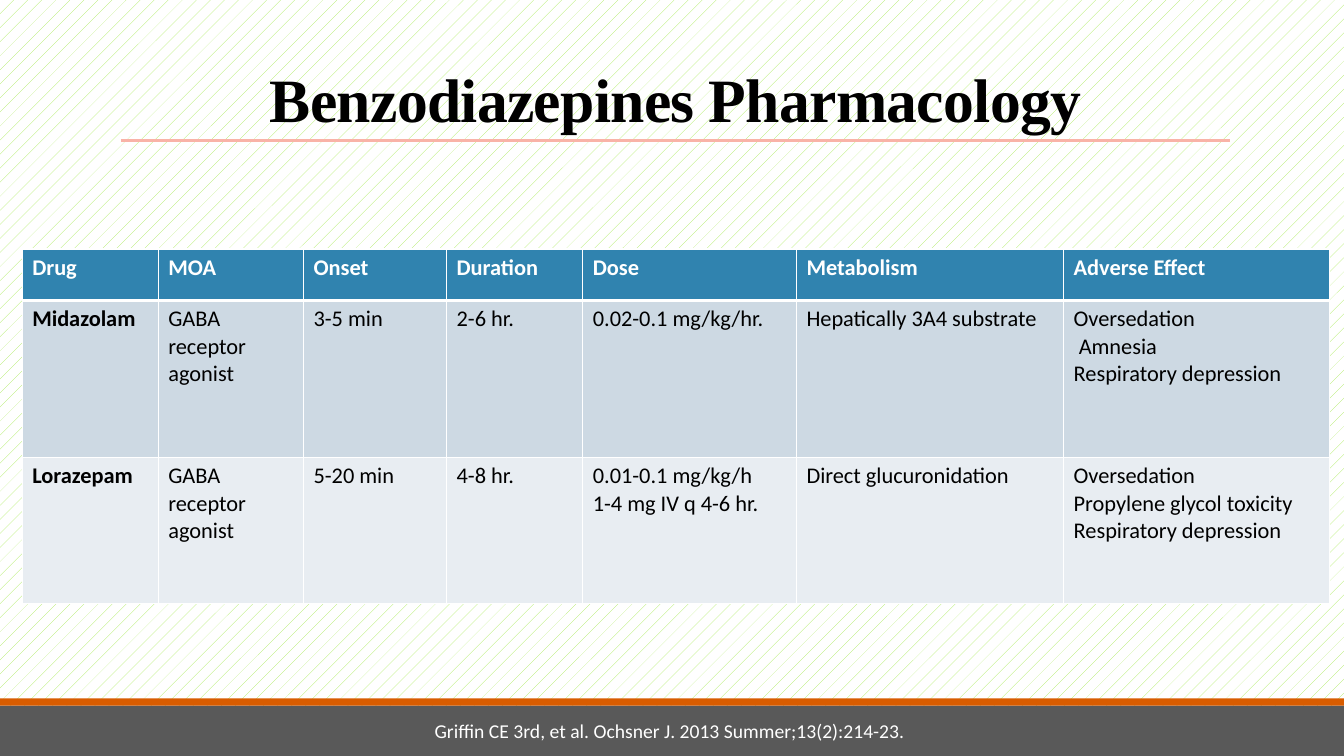
from pptx import Presentation
from pptx import util as u
from pptx.dml.color import RGBColor
from pptx.enum import dml, shapes, text
from pptx.oxml import parse_xml
from pptx.oxml.ns import nsdecls
from lxml import etree

WHITE = RGBColor(0xFF, 0xFF, 0xFF)
BLACK = RGBColor(0, 0, 0)
HATCH_GREEN = RGBColor(0xA7, 0xEA, 0x52)
FOOTER_GRAY = RGBColor(0x59, 0x59, 0x59)
FOOTER_ORANGE = RGBColor(0xD8, 0x5C, 0x00)
RULE_PINK = RGBColor(0xF9, 0xB3, 0xA7)
HEADER_BLUE = RGBColor(0x30, 0x83, 0xAF)
ROW_FILLS = [HEADER_BLUE, RGBColor(0xCD, 0xD9, 0xE3), RGBColor(0xE8, 0xED, 0xF2)]

COLUMN_WIDTHS = [1.35, 1.44, 1.42, 1.35, 2.12, 2.65, 2.64]
ROW_HEIGHTS = [0.51, 1.56, 1.45]
DRUG_ROWS = [
    ["Drug", "MOA", "Onset", "Duration", "Dose", "Metabolism", "Adverse Effect"],
    ["Midazolam", "GABA receptor agonist", "3-5 min", "2-6 hr.", "0.02-0.1 mg/kg/hr.",
     "Hepatically 3A4 substrate", "Oversedation\n Amnesia\nRespiratory depression"],
    ["Lorazepam", "GABA receptor agonist", "5-20 min", "4-8 hr.",
     "0.01-0.1 mg/kg/h\n1-4 mg IV q 4-6 hr.", "Direct glucuronidation",
     "Oversedation\nPropylene glycol toxicity\nRespiratory depression"],
]


def format_text(frame, font_name, size, color, bold=False, alignment=None):
    for paragraph in frame.paragraphs:
        paragraph.alignment = alignment
        for run in paragraph.runs:
            run.font.name = font_name
            run.font.size = u.Pt(size)
            run.font.bold = bold
            run.font.color.rgb = color


def add_border(cell, side, points):
    cell._tc.get_or_add_tcPr().append(parse_xml(
        f'<a:ln{side} {nsdecls("a")} w="{u.Pt(points)}"><a:solidFill>'
        f'<a:srgbClr val="{WHITE}"/></a:solidFill></a:ln{side}>'))


presentation = Presentation()
presentation.slide_width = u.Inches(13.33)
presentation.slide_height = u.Inches(7.5)
WIDTH = presentation.slide_width
slide = presentation.slides.add_slide(presentation.slide_layouts[5])

# Patterned background
background = slide.background.fill
background.patterned()
background.pattern = dml.MSO_PATTERN.PERCENT_5
background.fore_color.rgb = HATCH_GREEN
background.back_color.rgb = WHITE

# Footer bands
for top, height, color in [(7, 0.5, FOOTER_GRAY), (6.93, 0.07, FOOTER_ORANGE)]:
    band = slide.shapes.add_shape(shapes.MSO_SHAPE.RECTANGLE, 0, u.Inches(top),
                                  WIDTH, u.Inches(height))
    band.shadow.inherit = False
    band.fill.solid()
    band.fill.fore_color.rgb = color
    band.line.fill.background()

# Title with the rule below it
title = slide.shapes.title
title.left, title.top = u.Inches(1.2), u.Inches(0.31)
title.width, title.height = u.Inches(11), u.Inches(1.08)
title_frame = title.text_frame
title_frame.text = "Benzodiazepines Pharmacology"
title_frame.auto_size = text.MSO_AUTO_SIZE.NONE
title_frame.vertical_anchor = text.MSO_ANCHOR.BOTTOM
title_frame.paragraphs[0].line_spacing = 0.85
format_text(title_frame, "Times New Roman", 44, BLACK, True, text.PP_ALIGN.CENTER)
title_frame.paragraphs[0].runs[0]._r.get_or_add_rPr().set("spc", "-50")

rule_top = title.top + title.height
rule = slide.shapes.add_connector(shapes.MSO_CONNECTOR.STRAIGHT, title.left, rule_top,
                                  title.left + title.width, rule_top)
rule.line.color.rgb = RULE_PINK
rule.line.width = u.Pt(2.25)
etree.SubElement(rule._element.spPr,
                 "{http://schemas.openxmlformats.org/drawingml/2006/main}effectLst")

# Drug comparison table
table = slide.shapes.add_table(
    len(ROW_HEIGHTS), len(COLUMN_WIDTHS), u.Inches(0.22), u.Inches(2.47),
    u.Inches(sum(COLUMN_WIDTHS)), u.Inches(sum(ROW_HEIGHTS))).table
for column, width in zip(table.columns, COLUMN_WIDTHS):
    column.width = u.Inches(width)
for row_index, values in enumerate(DRUG_ROWS):
    table.rows[row_index].height = u.Inches(ROW_HEIGHTS[row_index])
    is_header = row_index == 0
    for column_index, value in enumerate(values):
        cell = table.cell(row_index, column_index)
        cell.text_frame.text = value
        format_text(cell.text_frame, "Calibri", 16, WHITE if is_header else BLACK,
                    is_header or column_index == 0)
        for side in "LRTB":
            touches_header_edge = (row_index, side) in [(0, "B"), (1, "T")]
            add_border(cell, side, 3 if touches_header_edge else 1)
        cell.fill.solid()
        cell.fill.fore_color.rgb = ROW_FILLS[row_index]

# Citation, centred over half of the slide's width
citation = slide.shapes.add_textbox(WIDTH // 4, u.Inches(7.08), WIDTH // 2, u.Inches(0.34))
citation.text_frame.word_wrap = True
citation.text_frame.text = "Griffin CE 3rd, et al. Ochsner J. 2013 Summer;13(2):214-23. "
format_text(citation.text_frame, "Calibri", 14, WHITE, alignment=text.PP_ALIGN.CENTER)

presentation.save("out.pptx")
